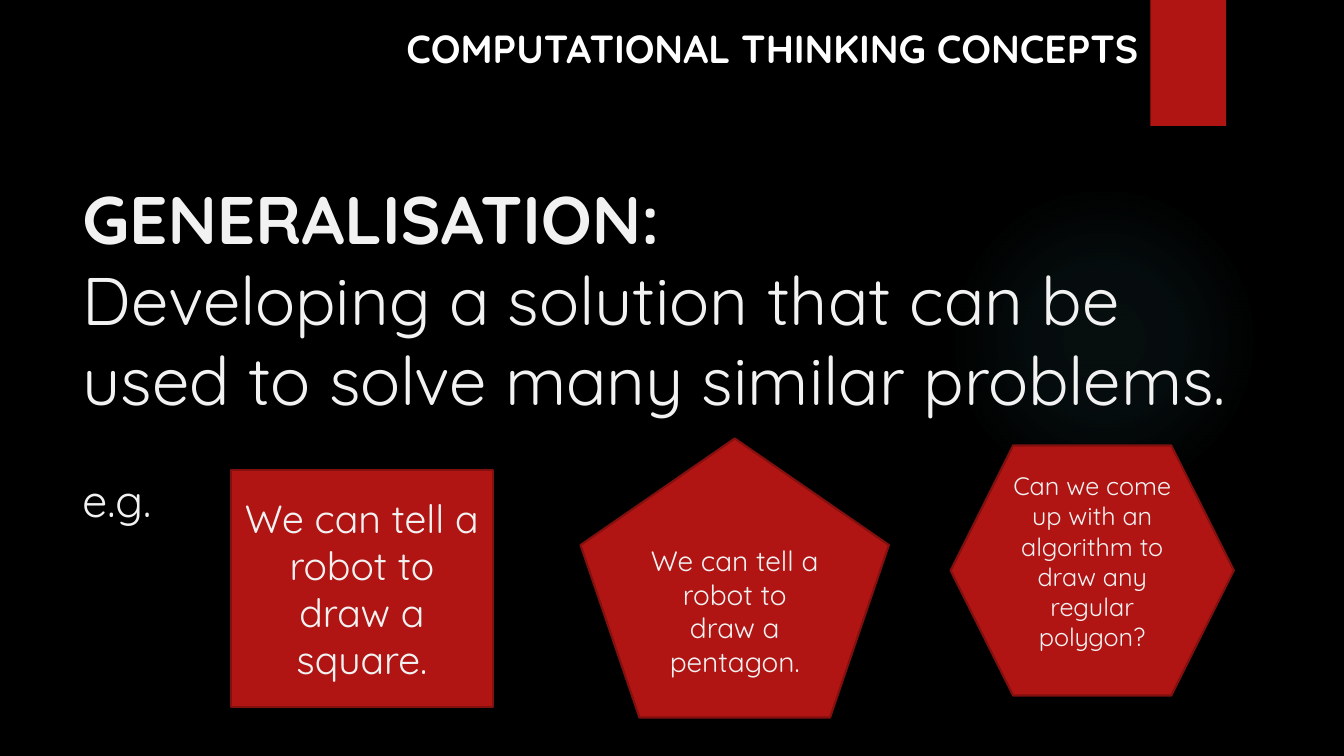
import pptx
import pptx.util
import pptx.dml.color
import pptx.enum.shapes
import pptx.enum.text
import pptx.oxml

Pt = pptx.util.Pt
Shape = pptx.enum.shapes.MSO_SHAPE
Align = pptx.enum.text.PP_ALIGN
Anchor = pptx.enum.text.MSO_ANCHOR
NAMESPACE = 'xmlns:a="http://schemas.openxmlformats.org/drawingml/2006/main"'
COLOURS = {"black": "000000", "red": "B01513", "outline": "82100E",
           "text": "F2F2F2", "title": "FFFFFF", "glow": "50B9C1"}


def colour(name):
    return pptx.dml.color.RGBColor.from_string(COLOURS[name])


def style(para, size, name="text", bold=False, align=Align.LEFT):
    para.alignment = align
    para.font.name = "Quicksand"
    para.font.size = Pt(size)
    para.font.bold = bold
    para.font.color.rgb = colour(name)


deck = pptx.Presentation()
deck.slide_width = Pt(960)
deck.slide_height = Pt(540)
page = deck.slides.add_slide(deck.slide_layouts[6])
page.background.fill.solid()
page.background.fill.fore_color.rgb = colour("black")

glow = page.shapes.add_shape(Shape.OVAL, Pt(677.5), Pt(131.8), Pt(221.8), Pt(221.8))
glow.shadow.inherit = False
glow.line.fill.background()
stops = "".join(
    f'<a:gs pos="{position * 1000}"><a:srgbClr val="{COLOURS["glow"]}">'
    f'<a:alpha val="{alpha * 1000}"/></a:srgbClr></a:gs>'
    for position, alpha in [(0, 7), (36, 6), (69, 0)])
gradient = pptx.oxml.parse_xml(
    f'<a:gradFill {NAMESPACE} rotWithShape="1"><a:gsLst>{stops}</a:gsLst>'
    '<a:path path="circle"><a:fillToRect l="50000" t="50000" r="50000" b="50000"/>'
    '</a:path></a:gradFill>')
glow.element.spPr.find(pptx.oxml.ns.qn("a:prstGeom")).addnext(gradient)

tab = page.shapes.add_shape(Shape.RECTANGLE, Pt(821.8), Pt(0), Pt(54), Pt(90))
tab.shadow.inherit = False
tab.fill.solid()
tab.fill.fore_color.rgb = colour("red")
tab.line.fill.background()
effects = tab.element.spPr.find(pptx.oxml.ns.qn("a:effectLst"))
effects.append(pptx.oxml.parse_xml(
    f'<a:outerShdw {NAMESPACE} blurRad="{Pt(3)}" dist="{Pt(2)}" dir="5400000" rotWithShape="0">'
    f'<a:srgbClr val="{COLOURS["black"]}"><a:alpha val="45000"/></a:srgbClr></a:outerShdw>'))

definition = page.shapes.add_textbox(Pt(51.8), Pt(123.1), Pt(869), Pt(259))
definition.text_frame.word_wrap = True
definition.text_frame.text = (
    "GENERALISATION:\n"
    "Developing a solution that can be used to solve many similar problems.\n"
    "e.g.")
heading, meaning, example = definition.text_frame.paragraphs
style(heading, 48, bold=True)
style(meaning, 48)
style(example, 32)
example.space_before = Pt(38.4)

polygons = [
    (Shape.RECTANGLE, 164.9, 335.5, 187.2, 169.2, 28, 3.6,
     "We can tell a robot to draw a square."),
    (Shape.REGULAR_PENTAGON, 414.7, 313.2, 220.3, 199.4, 20, 3.6,
     "We can tell a robot to draw a pentagon."),
    (Shape.HEXAGON, 679, 318.2, 202.3, 178.6, 18, 16.8,
     "Can we come up with an algorithm to draw any regular polygon?"),
]
for kind, left, top, width, height, size, bottom, words in polygons:
    polygon = page.shapes.add_shape(kind, Pt(left), Pt(top), Pt(width), Pt(height))
    polygon.shadow.inherit = False
    polygon.fill.solid()
    polygon.fill.fore_color.rgb = colour("red")
    polygon.line.color.rgb = colour("outline")
    polygon.line.width = Pt(1.5)
    frame = polygon.text_frame
    frame.word_wrap = True
    frame.vertical_anchor = Anchor.MIDDLE
    frame.margin_bottom = Pt(bottom)
    frame.text = words
    style(frame.paragraphs[0], size, align=Align.CENTER)

title = page.shapes.add_textbox(Pt(25.2), Pt(13.7), Pt(794.9), Pt(41))
title.text_frame.word_wrap = True
title.text_frame.text = "COMPUTATIONAL THINKING CONCEPTS"
style(title.text_frame.paragraphs[0], 28, "title", True, Align.RIGHT)

deck.save("out.pptx")
